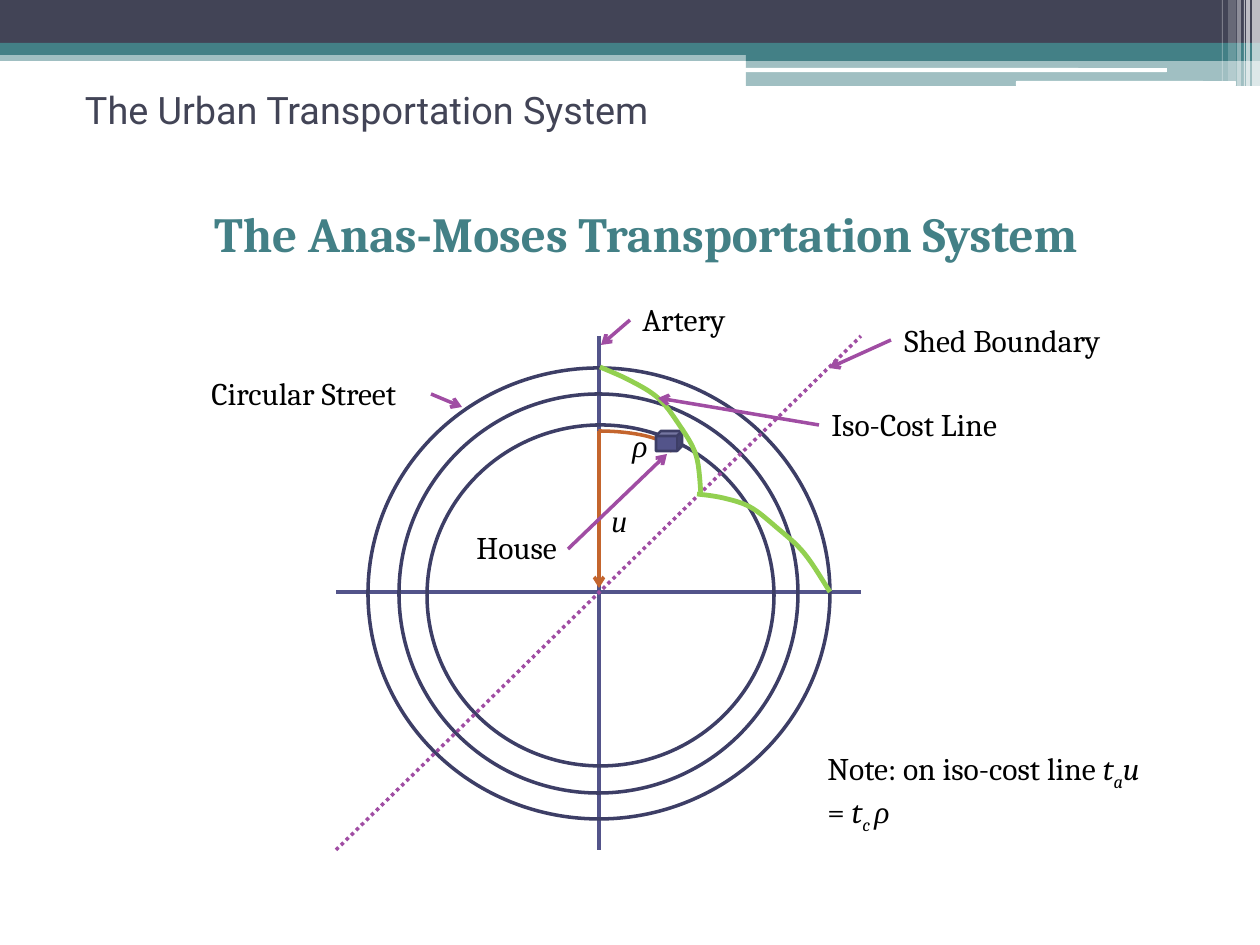
import collections

import lxml.etree
import pptx
import pptx.dml.color
import pptx.enum.dml
import pptx.enum.shapes
import pptx.enum.text
import pptx.oxml.ns
import pptx.util

PX = 914400 / 126
COLORS = {
    "slate": "424456", "teal": "438086", "white": "FFFFFF", "black": "000000",
    "road": "53548A", "ring": "3D3E66", "pointer": "A04DA3",
    "trip": "C4652D", "iso_cost": "92D050",
}
SHAPE = pptx.enum.shapes.MSO_SHAPE
ANCHOR = pptx.enum.text.MSO_ANCHOR
AUTO_SIZE = pptx.enum.text.MSO_AUTO_SIZE
Box = collections.namedtuple("Box", "left top width height")


def px(length):
    return pptx.util.Emu(round(length * PX))


def color(name):
    return pptx.dml.color.RGBColor.from_string(COLORS[name])


def add_element(parent, tag, **attributes):
    return lxml.etree.SubElement(parent, pptx.oxml.ns.qn(tag), **attributes)


def within(box, left, top, width, height):
    return px(box.left + left), px(box.top + top), px(width), px(height)


def style_line(line, name, width):
    line.color.rgb = color(name)
    line.width = pptx.util.Pt(width)


def add_shape(slide, box, kind, place, fill=None, line=None, width=2, opacity=100):
    shape = slide.shapes.add_shape(kind, *within(box, *place))
    shape.shadow.inherit = False
    if fill:
        shape.fill.solid()
        shape.fill.fore_color.rgb = color(fill)
        if opacity < 100:
            srgb = shape.fill._xPr.find(".//" + pptx.oxml.ns.qn("a:srgbClr"))
            add_element(srgb, "a:alpha", val=str(opacity * 1000))
    else:
        shape.fill.background()
    if line:
        style_line(shape.line, line, width)
    else:
        shape.line.fill.background()


def add_line(slide, box, start, end, name, arrow=False, dash=None):
    line = slide.shapes.add_connector(
        pptx.enum.shapes.MSO_CONNECTOR.STRAIGHT,
        px(box.left + start[0]), px(box.top + start[1]),
        px(box.left + end[0]), px(box.top + end[1]))
    style_line(line.line, name, 2)
    if dash:
        line.line.dash_style = dash
    if arrow:
        add_element(line.line._get_or_add_ln(), "a:tailEnd", type="arrow")
    add_element(line._element.spPr, "a:effectLst")


def add_run(paragraph, text, size, font, name, bold=None, italic=None, baseline=None):
    run = paragraph.add_run()
    run.text = text
    run.font.size = pptx.util.Pt(size)
    run.font.name = font
    run.font.bold = bold
    run.font.italic = italic
    run.font.color.rgb = color(name)
    if baseline:
        run.font._element.set("baseline", str(baseline * 1000))


def add_label(slide, box, place, runs):
    """Each run is (text, font, italic, baseline percent)."""
    frame = slide.shapes.add_textbox(*within(box, *place)).text_frame
    frame.word_wrap = True
    frame.auto_size = AUTO_SIZE.SHAPE_TO_FIT_TEXT
    for text, font, italic, baseline in runs:
        add_run(frame.paragraphs[0], text, 18, font, "black",
                italic=italic, baseline=baseline)


def add_curve(slide, box, knots):
    """Draw a smooth open line through the knots (Catmull-Rom)."""
    steps = 8
    padded = [knots[0], *knots, knots[-1]]
    points = []
    for a, b, c, d in zip(padded, padded[1:], padded[2:], padded[3:]):
        for step in range(steps):
            t = step / steps
            points.append([
                b[i] + t * (c[i] - a[i]) / 2
                + t ** 2 * (a[i] - 2.5 * b[i] + 2 * c[i] - d[i] / 2)
                + t ** 3 * (3 * b[i] - a[i] - 3 * c[i] + d[i]) / 2
                for i in (0, 1)])
    points.append(knots[-1])
    vertices = [(px(box.left + x), px(box.top + y)) for x, y in points]
    builder = slide.shapes.build_freeform(*vertices[0])
    builder.add_line_segments(vertices[1:], close=False)
    curve = builder.convert_to_shape()
    curve.shadow.inherit = False
    curve.fill.background()
    style_line(curve.line, "iso_cost", 2.75)


def add_header(slide, box):
    split = 746
    bands = [
        (0, 50, box.width, 11, "teal", 50),
        (0, 0, box.width, 43, "slate", 100),
        (0, 43, box.width, 12, "teal", 100),
        (split, 49, box.width - split, 12, "teal", 100),
        (split, 61, box.width - split, 25, "teal", 50),
    ]
    for *place, fill, opacity in bands:
        add_shape(slide, box, SHAPE.RECTANGLE, place, fill, opacity=opacity)
    for place in [(745, 68, 422, 4), (1016, 81, 220, 5)]:
        add_shape(slide, box, SHAPE.ROUNDED_RECTANGLE, place, "white")
    stripes = [(1252, 8, 86, 65), (1246, 4, 86, 65), (1244, 1, 86, 60),
               (1237, 4, 86, 40), (1228, 8, 81, 20), (1222, 1, 81, 30)]
    for left, width, height, opacity in stripes:
        add_shape(slide, box, SHAPE.RECTANGLE, (left, 0, width, height),
                  "white", opacity=opacity)


def place_placeholder(holder, box):
    holder.left, holder.top, holder.width, holder.height = within(box, 0, 0, *box[2:])
    holder.text_frame.auto_size = AUTO_SIZE.NONE
    return holder.text_frame


def fill_title(slide, box):
    frame = place_placeholder(slide.shapes.title, box)
    frame.vertical_anchor = ANCHOR.MIDDLE
    frame.margin_left = px(22)
    frame.margin_top, frame.margin_bottom = 0, px(42)
    paragraph = frame.paragraphs[0]
    paragraph.alignment = pptx.enum.text.PP_ALIGN.LEFT
    add_run(paragraph, "The Urban Transportation System", 21.6, "Roboto", "slate")


def fill_body(slide, box):
    frame = place_placeholder(slide.placeholders[1], box)
    frame.vertical_anchor = ANCHOR.TOP
    paragraph = frame.paragraphs[0]
    paragraph.level = 2
    paragraph.alignment = pptx.enum.text.PP_ALIGN.CENTER
    paragraph.space_before = pptx.util.Pt(0)
    properties = paragraph._p.get_or_add_pPr()
    properties.set("marL", str(pptx.util.Inches(0.25)))
    properties.set("indent", "0")
    add_element(properties, "a:buNone")
    add_run(paragraph, "The Anas-Moses Transportation System", 28, "Cambria",
            "teal", bold=True)


def add_diagram(slide, box):
    west, east, north, south = 137, 662, 42, 556
    center_x, center_y = 400, 298
    add_line(slide, box, (center_x, north), (center_x, south), "road")
    add_line(slide, box, (east, center_y), (west, center_y), "road")
    for ring in [(200, 100, 399, 399), (228, 131, 347, 341), (169, 74, 462, 451)]:
        add_shape(slide, box, SHAPE.OVAL, ring, line="ring")

    add_shape(slide, box, SHAPE.ARC, (326, 137, 147, 42), line="trip")
    add_line(slide, box, (center_x, 137), (center_x, 294), "trip", arrow=True)
    add_shape(slide, box, SHAPE.CUBE, (457, 137, 26, 20), "road", "ring", 1.5)
    add_line(slide, box, (west, south), (east, north), "pointer",
             dash=pptx.enum.dml.MSO_LINE.ROUND_DOT)

    iso_cost_lines = [
        [(401, 73), (432, 87), (459, 104), (479, 129), (497, 161), (502, 200)],
        [(498, 200), (524, 204), (551, 213), (577, 233), (605, 259), (631, 298)],
    ]
    for knots in iso_cost_lines:
        add_curve(slide, box, knots)

    pointers = [((431, 26), (402, 51)), ((232, 100), (263, 113)),
                ((692, 46), (630, 74)), ((369, 255), (468, 160)),
                ((620, 131), (459, 104))]
    for start, end in pointers:
        add_line(slide, box, start, end, "pointer", arrow=True)

    labels = [("Artery", 431, 0, 231), ("Circular Street", 0, 74, 231),
              ("Iso-Cost Line", 620, 105, 231), ("Shed Boundary", 693, 21, 321),
              ("House", 265, 228, 231)]
    for text, left, top, width in labels:
        add_label(slide, box, (left, top, width, 50), [(text, "Cambria", None, 0)])
    for symbol, left, top, width in [("ρ", 421, 126, 84), ("u", 400, 201, 73)]:
        add_label(slide, box, (left, top, width, 50),
                  [(symbol, "Times New Roman", True, 0)])
    add_label(slide, box, (616, 449, 350, 89), [
        ("Note: on iso-cost line ", "Cambria", None, 0),
        ("t", "Cambria", True, 0), ("a", "Cambria", True, -25),
        ("u", "Cambria", True, 0), (" = ", "Cambria", None, 0),
        ("t", "Cambria", True, 0), ("c ", "Cambria", True, -25),
        ("ρ", "Times New Roman", True, 0)])


def main():
    presentation = pptx.Presentation()
    presentation.slide_width, presentation.slide_height = px(1260), px(945)
    slide = presentation.slides.add_slide(presentation.slide_layouts[1])
    add_header(slide, Box(0, 0, 1260, 86))
    fill_title(slide, Box(63, 94, 1134, 73))
    fill_body(slide, Box(63, 197, 1134, 738))
    add_diagram(slide, Box(199, 294, 1014, 556))
    presentation.save("out.pptx")


if __name__ == "__main__":
    main()
